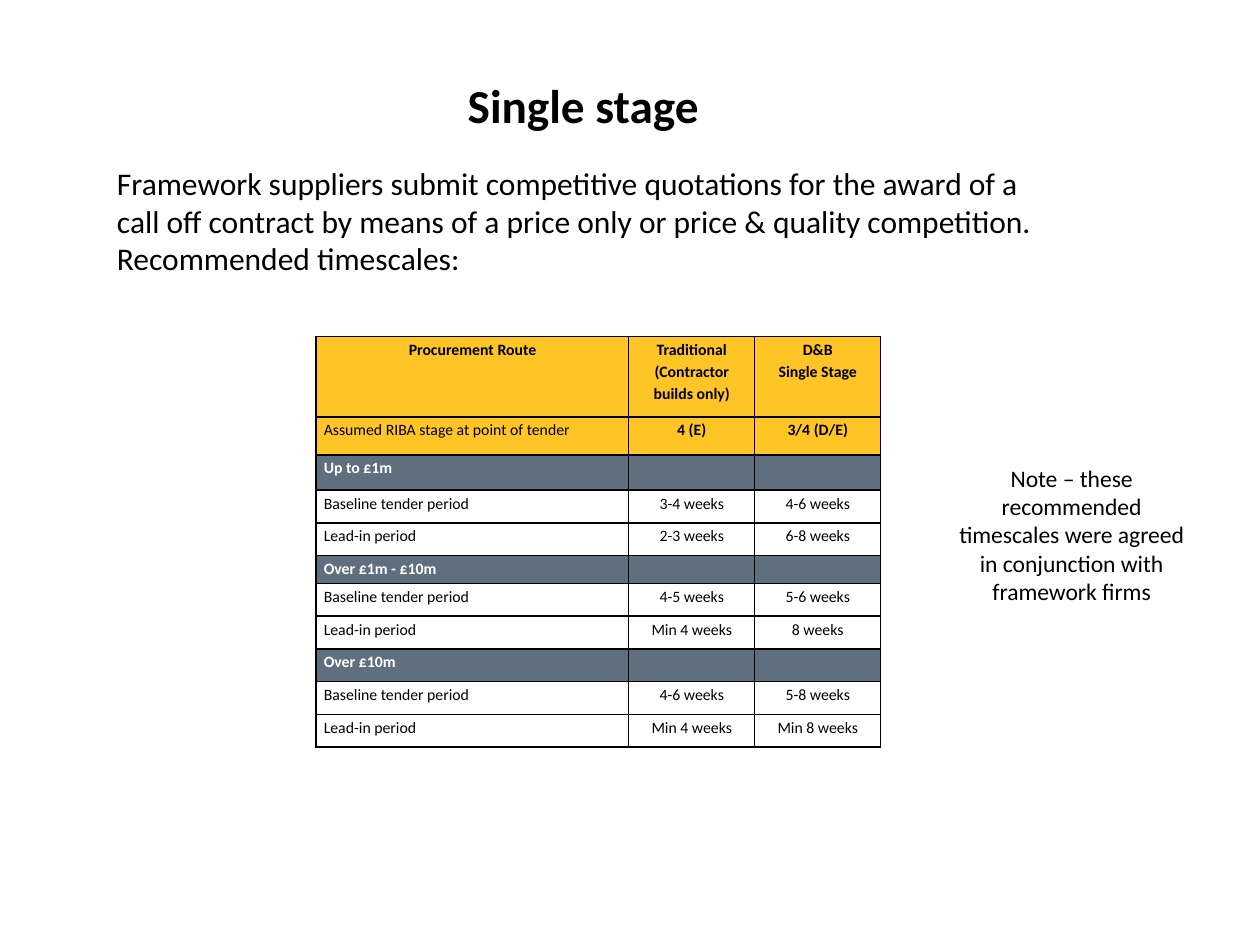
from typing import NamedTuple

from lxml import etree
from pptx import Presentation
from pptx.dml.color import RGBColor
from pptx.enum.text import MSO_ANCHOR, PP_ALIGN
from pptx.oxml.ns import qn
from pptx.util import Inches, Pt

LEFT, MID = PP_ALIGN.LEFT, PP_ALIGN.CENTER
TOP, CENTRE = MSO_ANCHOR.TOP, MSO_ANCHOR.MIDDLE
BLACK = RGBColor(0x00, 0x00, 0x00)
WHITE = RGBColor(0xFF, 0xFF, 0xFF)
GOLD = RGBColor(0xFF, 0xC4, 0x25)
SLATE = RGBColor(0x60, 0x6F, 0x7E)
FONT = "Calibri"
WIDE, HIGH = Inches(10), Inches(7.5)


class Area(NamedTuple):
    """A place on the slide, in percent of its width and height."""
    x: float
    y: float
    w: float
    h: float


class Style(NamedTuple):
    size: float
    bold: bool = False
    color: RGBColor = BLACK
    align: PP_ALIGN = LEFT


class Label(NamedTuple):
    area: Area
    text: str
    style: Style
    anchor: MSO_ANCHOR = TOP
    right: float = 0.1


class Row(NamedTuple):
    high: float
    cells: tuple[str, ...]
    fill: RGBColor
    first: Style
    rest: Style


def across(share: float) -> int:
    return round(WIDE * share / 100)


def down(share: float) -> int:
    return round(HIGH * share / 100)


def place(area: Area) -> tuple[int, int, int, int]:
    return across(area.x), down(area.y), across(area.w), down(area.h)


def write(para, text: str, style: Style) -> None:
    para.alignment = style.align
    run = para.add_run()
    run.text = text
    font = run.font
    font.name, font.size, font.bold = FONT, Pt(style.size), style.bold
    font.color.rgb = style.color


def draw_label(slide, label: Label) -> None:
    frame = slide.shapes.add_textbox(*place(label.area)).text_frame
    frame.word_wrap = True
    frame.vertical_anchor = label.anchor
    frame.margin_right = Inches(label.right)
    write(frame.paragraphs[0], label.text, label.style)


def add_edges(cell) -> None:
    props = cell._tc.get_or_add_tcPr()
    for spot, side in enumerate(("a:lnL", "a:lnR", "a:lnT", "a:lnB")):
        line = etree.Element(qn(side), w=str(Pt(1)))
        fill = etree.SubElement(line, qn("a:solidFill"))
        etree.SubElement(fill, qn("a:srgbClr"), val=str(BLACK))
        props.insert(spot, line)


def fill_cell(cell, text: str, fill: RGBColor, style: Style) -> None:
    cell.fill.solid()
    cell.fill.fore_color.rgb = fill
    cell.margin_left = cell.margin_right = Inches(0.06)
    cell.margin_top, cell.margin_bottom = Inches(0.01), 0
    add_edges(cell)
    frame = cell.text_frame
    for spot, part in enumerate(text.split("\n")):
        para = frame.add_paragraph() if spot else frame.paragraphs[0]
        para.line_spacing = 1.15
        if part:
            write(para, part, style)
        else:  # keeps an empty cell as low as its row
            etree.SubElement(para._p, qn("a:endParaRPr"), sz=str(round(style.size * 100)))


def draw_table(slide, area: Area, cols: tuple[float, ...], rows: list[Row]) -> None:
    frame = slide.shapes.add_table(len(rows), len(cols), *place(area))
    table = frame.table
    table.first_row = table.horz_banding = False
    for col, share in zip(table.columns, cols):
        col.width = across(share)
    for r, row in enumerate(rows):
        table.rows[r].height = down(row.high)
        for c, text in enumerate(row.cells):
            fill_cell(table.cell(r, c), text, row.fill, row.rest if c else row.first)


PLAIN = Style(9)
PLAIN_MID = Style(9, align=MID)
HEAD = Style(9, True, align=MID)
BAND = Style(9, True, WHITE)


def band(text: str, high: float) -> Row:
    return Row(high, (text, "", ""), SLATE, BAND, BAND)


def period(name: str, trad: str, build: str) -> Row:
    return Row(3.47, (name, trad, build), WHITE, PLAIN, PLAIN_MID)


BASE, LEAD = "Baseline tender period", "Lead-in period"
ROWS = [
    Row(8.53, ("Procurement Route", "Traditional (Contractor builds only)",
               "D&B\nSingle Stage"), GOLD, HEAD, HEAD),
    Row(4, ("Assumed RIBA stage at point of tender", "4 (E)", "3/4 (D/E)"),
        GOLD, PLAIN, HEAD),
    band("Up to £1m", 3.73),
    period(BASE, "3-4 weeks", "4-6 weeks"),
    period(LEAD, "2-3 weeks", "6-8 weeks"),
    band("Over £1m - £10m", 2.93),
    period(BASE, "4-5 weeks", "5-6 weeks"),
    period(LEAD, "Min 4 weeks", "8 weeks"),
    band("Over £10m", 3.47),
    period(BASE, "4-6 weeks", "5-8 weeks"),
    period(LEAD, "Min 4 weeks", "Min 8 weeks"),
]

LABELS = [
    Label(Area(8.3, 16.67, 76.8, 16.53),
          "Framework suppliers submit competitive quotations for the award of a "
          "call off contract by means of a price only or price & quality "
          "competition. Recommended timescales:", Style(18)),
    Label(Area(4.6, 5.73, 85.1, 10.67), "Single stage",
          Style(27, True, align=MID), CENTRE, right=0.27),
    Label(Area(74.8, 48.4, 20.5, 16.53),
          "Note – these recommended timescales were agreed in conjunction "
          "with framework firms", Style(13.5, align=MID)),
]


def main() -> None:
    deck = Presentation()
    deck.slide_width, deck.slide_height = WIDE, HIGH
    slide = deck.slides.add_slide(deck.slide_layouts[6])
    # Title, introduction and side note
    for label in LABELS:
        draw_label(slide, label)
    # Timescales by contract value
    draw_table(slide, Area(25.1, 35.6, 44.8, 43.47), (24.8, 10, 10), ROWS)
    deck.save("out.pptx")


if __name__ == "__main__":
    main()
